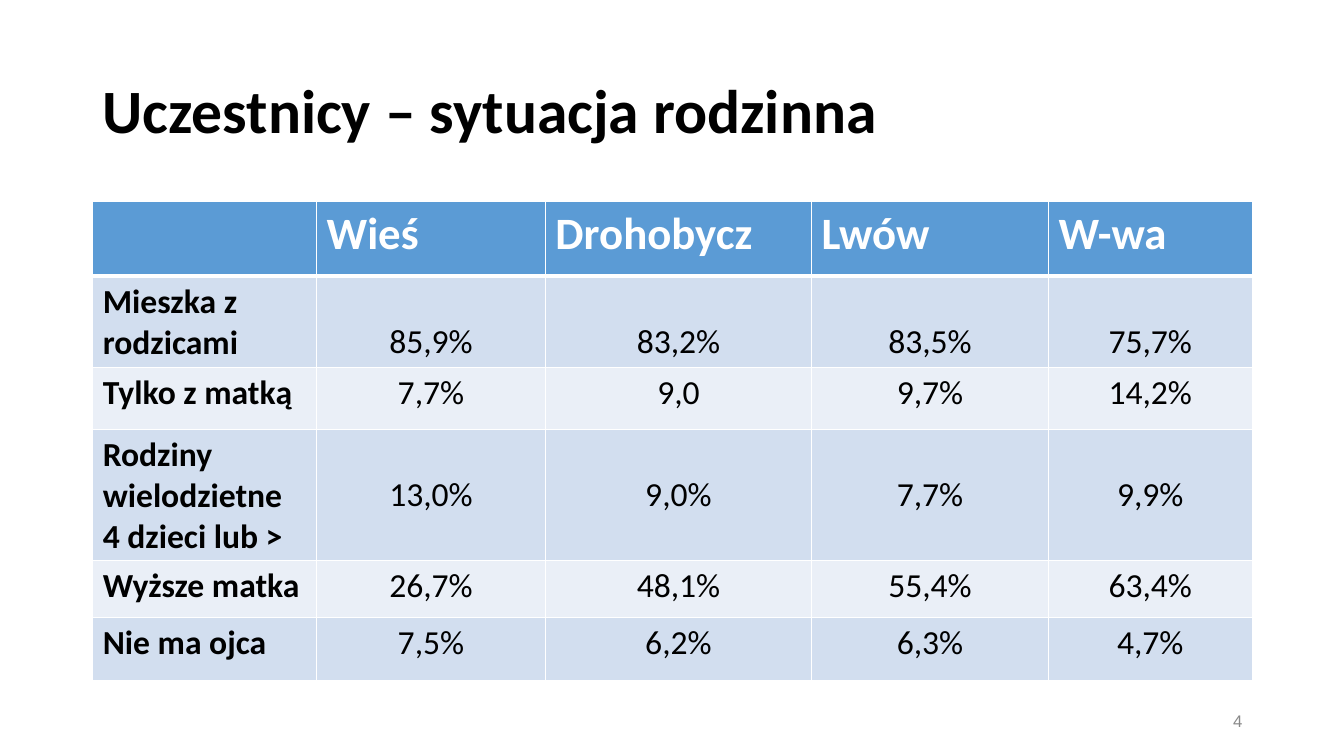
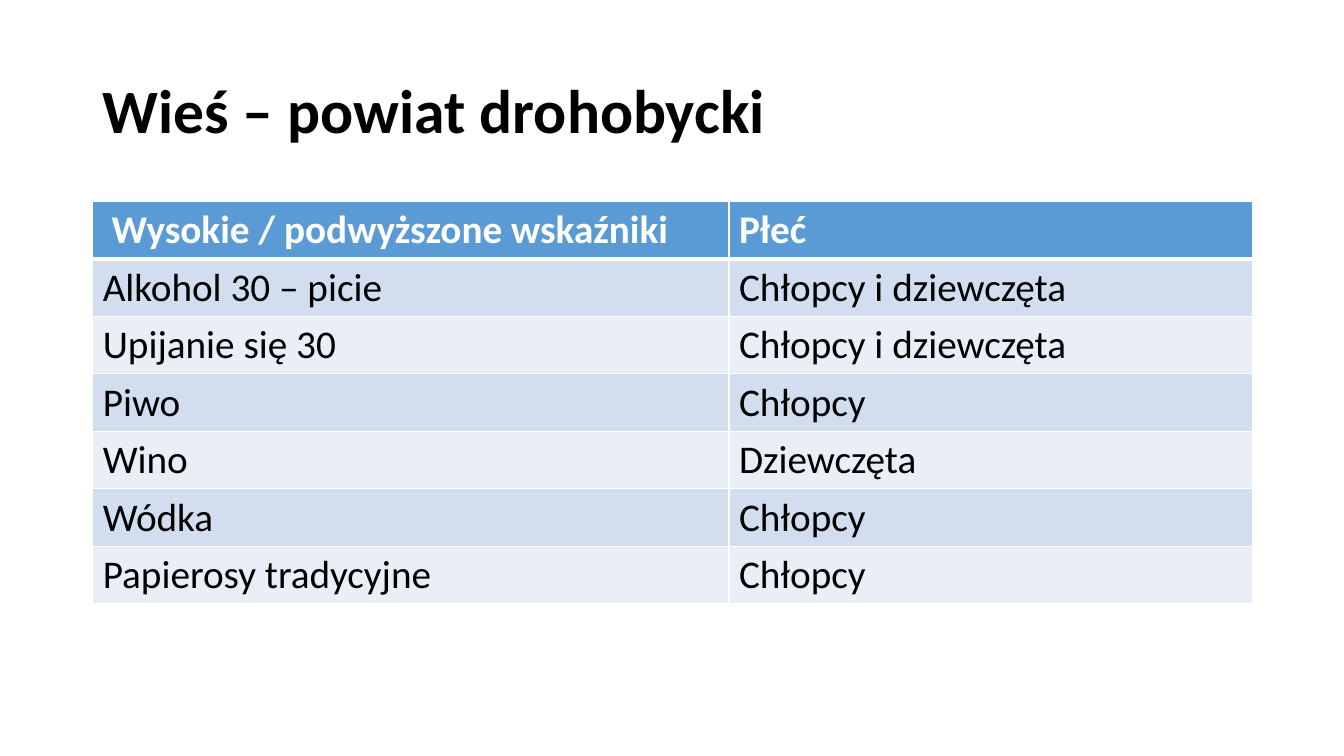
"""Build two table slides on the family situation and risk indicators of participants."""
from lxml.etree import SubElement
from pptx import Presentation
from pptx.dml.color import RGBColor
from pptx.enum.text import MSO_ANCHOR, PP_ALIGN
from pptx.oxml.ns import qn
from pptx.util import Inches, Pt

COLOURS = {
    "text": "000000",
    "header_text": "FFFFFF",
    "number": "898989",
    "border": "FFFFFF",
    "header": "5B9BD5",
    "odd": "D2DEEF",
    "even": "EAEFF7",
}
LEFT, WIDTH, TABLE_TOP = 0.92, 11.5, 2

FAMILY_ROWS = [
    ["", "Wieś", "Drohobycz", "Lwów", "W-wa"],
    ["Mieszka z rodzicami", "85,9%", "83,2%", "83,5%", "75,7%"],
    ["Tylko z matką", "7,7%", "9,0", "9,7%", "14,2%"],
    ["Rodziny wielodzietne\n4 dzieci lub >", "13,0%", "9,0%", "7,7%", "9,9%"],
    ["Wyższe matka", "26,7%", "48,1%", "55,4%", "63,4%"],
    ["Nie ma ojca", "7,5%", "6,2%", "6,3%", "4,7%"],
]
FAMILY_WIDTHS = [2.22, 2.27, 2.64, 2.35, 2.02]
FAMILY_HEIGHTS = [0.74, 0.91, 0.61, 1.26, 0.57, 0.62]
FAMILY_ANCHORS = {1: MSO_ANCHOR.BOTTOM, 3: MSO_ANCHOR.MIDDLE}

RISK_ROWS = [
    [" Wysokie / podwyższone wskaźniki", "Płeć"],
    ["Alkohol 30 – picie", "Chłopcy i dziewczęta"],
    ["Upijanie się 30", "Chłopcy i dziewczęta"],
    ["Piwo", "Chłopcy"],
    ["Wino", "Dziewczęta"],
    ["Wódka", "Chłopcy"],
    ["Papierosy tradycyjne", "Chłopcy"],
]
RISK_WIDTHS = [6.31, 5.19]
RISK_HEIGHTS = [0.57] * len(RISK_ROWS)


def write(frame, text, colour, size, bold=False, name="Calibri", **layout):
    frame.text = text
    font_values = {"size": Pt(size), "bold": bold, "name": name}
    for paragraph in frame.paragraphs:
        for attribute, value in layout.items():
            setattr(paragraph, attribute, value)
        for span in paragraph.runs:
            for attribute, value in font_values.items():
                setattr(span.font, attribute, value)
            span.font.color.rgb = RGBColor.from_string(COLOURS[colour])


def add_text(page, place, text, colour, size, **style):
    box = page.shapes.add_textbox(*map(Inches, place))
    box.text_frame.word_wrap = True
    box.text_frame.vertical_anchor = MSO_ANCHOR.MIDDLE
    write(box.text_frame, text, colour, size, **style)


def add_title(page, text):
    add_text(page, (LEFT, 0.4, WIDTH, 1.45), text, "text", 44,
             bold=True, line_spacing=0.9)


def set_borders(cell, row):
    properties = cell._tc.get_or_add_tcPr()
    widths = {"lnL": 1, "lnR": 1, "lnT": 3 if row == 1 else 1,
              "lnB": 3 if row == 0 else 1}
    for side, width in widths.items():
        line = SubElement(properties, qn(f"a:{side}"), w=str(Pt(width)))
        fill = SubElement(line, qn("a:solidFill"))
        SubElement(fill, qn("a:srgbClr"), val=COLOURS["border"])


def paint_cell(cell, row):
    set_borders(cell, row)
    band = "header" if row == 0 else "odd" if row % 2 else "even"
    cell.fill.solid()
    cell.fill.fore_color.rgb = RGBColor.from_string(COLOURS[band])


def add_table(page, rows, widths, heights, header_size, body_size,
              row_labels=False, anchors=None):
    place = (LEFT, TABLE_TOP, WIDTH, sum(heights))
    table = page.shapes.add_table(len(rows), len(widths), *map(Inches, place)).table
    for column, width in zip(table.columns, widths):
        column.width = Inches(width)
    for index, (values, height) in enumerate(zip(rows, heights)):
        table.rows[index].height = Inches(height)
        is_header = index == 0
        for position, value in enumerate(values):
            cell = table.cell(index, position)
            paint_cell(cell, index)
            is_label = row_labels and position == 0
            is_figure = row_labels and not is_header and not is_label
            write(cell.text_frame, value,
                  "header_text" if is_header else "text",
                  header_size if is_header else body_size,
                  bold=is_header or is_label,
                  alignment=PP_ALIGN.CENTER if is_figure else PP_ALIGN.LEFT)
            if is_figure:
                cell.vertical_anchor = (anchors or {}).get(index, MSO_ANCHOR.TOP)


def main():
    deck = Presentation()
    deck.slide_width, deck.slide_height = Inches(13.33), Inches(7.5)
    blank = deck.slide_layouts[6]

    family = deck.slides.add_slide(blank)
    add_title(family, "Uczestnicy – sytuacja rodzinna")
    add_table(family, FAMILY_ROWS, FAMILY_WIDTHS, FAMILY_HEIGHTS, 32, 24,
              row_labels=True, anchors=FAMILY_ANCHORS)
    add_text(family, (9.42, 6.95, 3, 0.4), "4", "number", 12,
             name="Arial", alignment=PP_ALIGN.RIGHT)

    risk = deck.slides.add_slide(blank)
    add_title(risk, "Wieś – powiat drohobycki")
    add_table(risk, RISK_ROWS, RISK_WIDTHS, RISK_HEIGHTS, 28, 28)

    deck.save("out.pptx")


if __name__ == "__main__":
    main()
